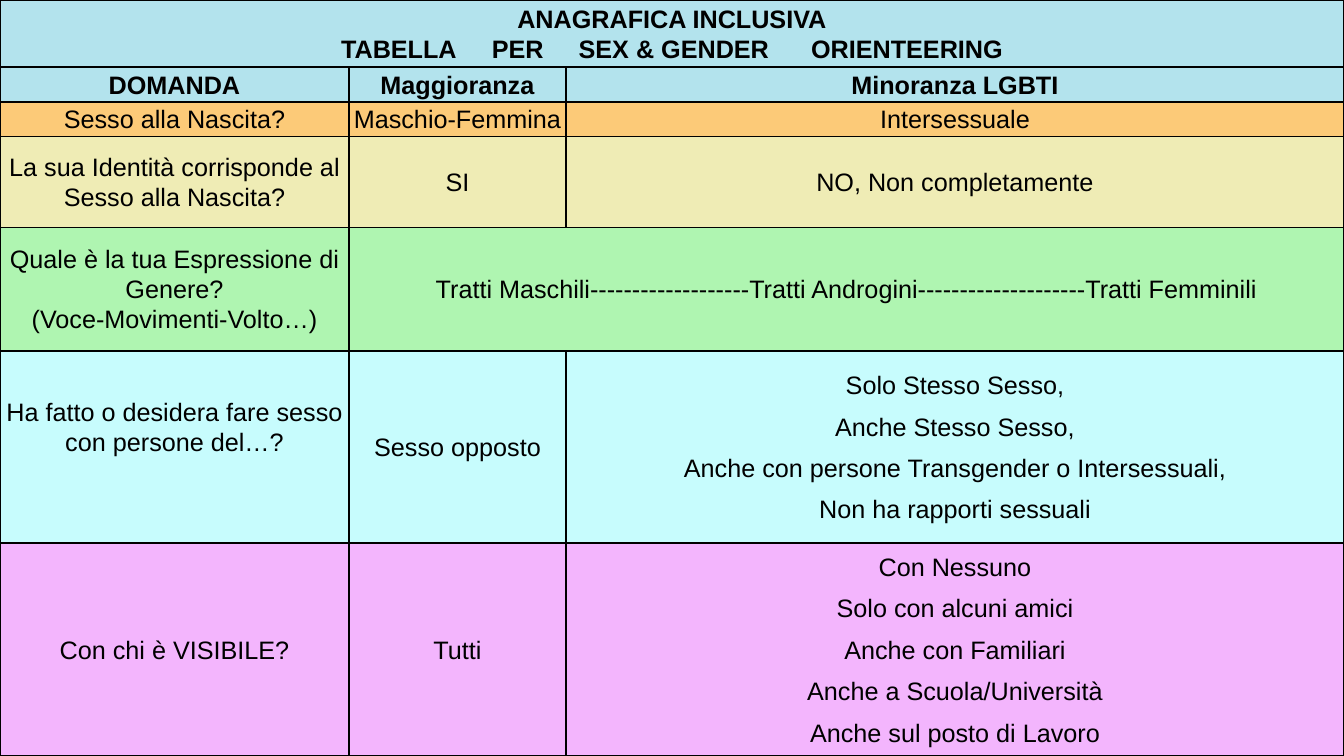
from lxml.etree import SubElement
from pptx import Presentation
from pptx.dml.color import RGBColor
from pptx.enum.text import MSO_ANCHOR, PP_ALIGN
from pptx.oxml.ns import qn
from pptx.util import Emu, Pt

SCALE = 914400 / 100.8
COLORS = {
    "ink": "000000", "header": "B3E3ED", "birth": "FCCA78", "identity": "EFECB5",
    "expression": "AFF5B1", "attraction": "C7FCFD", "visibility": "F3B5FD",
}
FONT = {"name": "Arial", "size": Pt(18)}
HEADER_SPACING = {"line_spacing": 1.07, "alignment": PP_ALIGN.CENTER}
BODY_SPACING = {**HEADER_SPACING, "space_after": Pt(8)}
COLUMNS = [349, 217, 778]
TITLE_WORDS = [("TABELLA", 20), ("PER", 20), ("SEX & GENDER", 25), ("ORIENTEERING", 0)]
ROWS = [
    (67, "header", [["ANAGRAFICA INCLUSIVA", TITLE_WORDS]]),
    (35, "header", [["DOMANDA"], ["Maggioranza"], ["Minoranza LGBTI"]]),
    (34, "birth", [["Sesso alla Nascita?"], ["Maschio-Femmina"], ["Intersessuale"]]),
    (91, "identity", [["La sua Identità corrisponde al Sesso alla Nascita?"], ["SI"],
                      ["NO, Non completamente"]]),
    (124, "expression", [
        ["Quale è la tua Espressione di Genere?\n(Voce-Movimenti-Volto…)"],
        ["Tratti Maschili-------------------Tratti Androgini"
         "--------------------Tratti Femminili"]]),
    (192, "attraction", [
        ["Ha fatto o desidera fare sesso con persone del…?"], ["Sesso opposto"],
        ["Solo Stesso Sesso,", "Anche Stesso Sesso,",
         "Anche con persone Transgender o Intersessuali,", "Non ha rapporti sessuali"]]),
    (213, "visibility", [
        ["Con chi è VISIBILE?"], ["Tutti"],
        ["Con Nessuno", "Solo con alcuni amici", "Anche con Familiari",
         "Anche a Scuola/Università", "Anche sul posto di Lavoro"]]),
]


def px(n):
    """Turn pixels into EMU."""
    return Emu(round(n * SCALE))


def rgb(name):
    """Look up a named colour."""
    return RGBColor.from_string(COLORS[name])


def apply(target, values):
    """Set attributes from a dict of format values."""
    for key, value in values.items():
        setattr(target, key, value)


def add_spaced_words(p, words):
    """Add words, each followed by one space widened by the given points."""
    for word, extra in words:
        p.add_run().text = word
        if extra:
            r = p.add_run()
            r.text = " "
            r._r.get_or_add_rPr().set("spc", str(extra * 100))


def write_cell(cell, paragraphs, spacing, bold):
    """Write centred paragraphs into a cell."""
    apply(cell, {"margin_left": px(4), "margin_right": px(4), "margin_top": px(2),
                 "margin_bottom": px(2), "vertical_anchor": MSO_ANCHOR.MIDDLE})
    tf = cell.text_frame
    for i, content in enumerate(paragraphs):
        p = tf.add_paragraph() if i else tf.paragraphs[0]
        if isinstance(content, str):
            p.text = content
        else:
            add_spaced_words(p, content)
        apply(p, spacing)
        for r in p.runs:
            apply(r.font, {**FONT, "bold": bold})
            r.font.color.rgb = rgb("ink")


def style_cell(cell, color):
    """Give a cell thin borders and a solid fill."""
    tcPr = cell._tc.get_or_add_tcPr()
    for side in ("lnL", "lnR", "lnT", "lnB"):
        ln = SubElement(tcPr, qn(f"a:{side}"), w=str(Pt(1)))
        fill = SubElement(ln, qn("a:solidFill"))
        SubElement(fill, qn("a:srgbClr"), val=COLORS["ink"])
    cell.fill.solid()
    cell.fill.fore_color.rgb = rgb(color)


def add_survey_table(s):
    """Add the full-slide question table."""
    heights = [row[0] for row in ROWS]
    table = s.shapes.add_table(len(ROWS), len(COLUMNS), 0, 0,
                               px(sum(COLUMNS)), px(sum(heights))).table
    apply(table, {"first_row": False, "horz_banding": False})
    for column, width in zip(table.columns, COLUMNS):
        column.width = px(width)
    last = len(COLUMNS) - 1
    for i, (height, color, texts) in enumerate(ROWS):
        table.rows[i].height = px(height)
        for j in range(len(COLUMNS)):
            style_cell(table.cell(i, j), color)
        if len(texts) <= last:
            table.cell(i, len(texts) - 1).merge(table.cell(i, last))
        spacing = BODY_SPACING if i else HEADER_SPACING
        for j, paragraphs in enumerate(texts):
            write_cell(table.cell(i, j), paragraphs, spacing, color == "header")
    return table


def main():
    """Build and save the slide."""
    prs = Presentation()
    apply(prs, {"slide_width": px(1344), "slide_height": px(756)})
    s = prs.slides.add_slide(prs.slide_layouts[6])
    table = add_survey_table(s)
    table.cell(5, 0).margin_bottom = px(43)
    prs.save("out.pptx")


if __name__ == "__main__":
    main()
